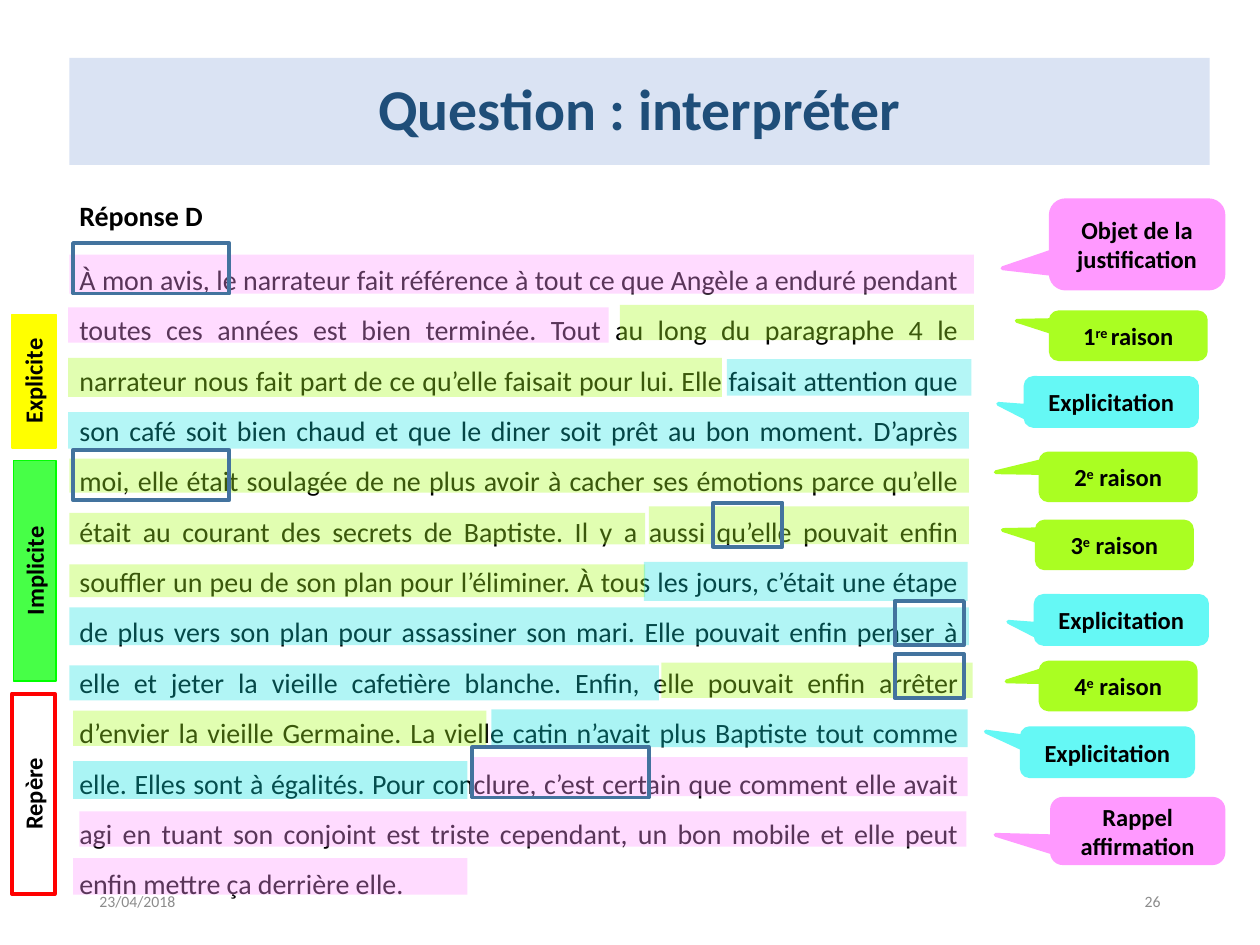
from pptx import Presentation
from pptx.dml.color import RGBColor
from pptx.enum.shapes import MSO_SHAPE
from pptx.enum.text import MSO_ANCHOR, MSO_AUTO_SIZE, PP_ALIGN
from pptx.oxml.ns import qn
from pptx.util import Inches, Pt
from lxml import etree

RECTANGLE = MSO_SHAPE.RECTANGLE
CALLOUT = MSO_SHAPE.ROUNDED_RECTANGULAR_CALLOUT
TOP, MIDDLE = MSO_ANCHOR.TOP, MSO_ANCHOR.MIDDLE
LEFT, CENTER, RIGHT, JUSTIFY = PP_ALIGN.LEFT, PP_ALIGN.CENTER, PP_ALIGN.RIGHT, PP_ALIGN.JUSTIFY

THEME = {
    "font": "Calibri",
    "title_size": 33, "body_size": 16, "label_size": 14, "footer_size": 9,
    "black": "000000", "grey": "8C8C8C", "navy": "1F4E79", "pale_blue": "DAE3F3",
    "pink": "FF99FF", "lime": "AAFE22", "teal": "0EE2E2", "cyan": "65F8F5",
    "yellow": "FFFF00", "green": "00FF00", "red": "FF0000", "steel": "43739E",
}

# Content; text between carets is superscript
TITLE = "Question : interpréter"
HEADING = "Réponse D"
ANSWER_SENTENCES = [
    "À mon avis, le narrateur fait référence à tout ce que Angèle a enduré pendant "
    "toutes ces années est bien terminée.",
    "Tout au long du paragraphe 4 le narrateur nous fait part de ce qu’elle faisait pour lui.",
    "Elle faisait attention que son café soit bien chaud et que le diner soit prêt au bon moment.",
    "D’après moi, elle était soulagée de ne plus avoir à cacher ses émotions parce qu’elle "
    "était au courant des secrets de Baptiste.",
    "Il y a aussi qu’elle pouvait enfin souffler un peu de son plan pour l’éliminer.",
    "À tous les jours, c’était une étape de plus vers son plan pour assassiner son mari.",
    "Elle pouvait enfin penser à elle et jeter la vieille cafetière blanche.",
    "Enfin, elle pouvait enfin arrêter d’envier la vieille Germaine.",
    "La vielle catin n’avait plus Baptiste tout comme elle.",
    "Elles sont à égalités.",
    "Pour conclure, c’est certain que comment elle avait agi en tuant son conjoint est triste "
    "cependant, un bon mobile et elle peut enfin mettre ça derrière elle.",
]
FOOTERS = [("23/04/2018", 0.69, LEFT), ("26", 7.06, RIGHT)]

# Highlighted passages: colour, opacity in percent, one area per line of text
HIGHLIGHTS = [
    ("pink", 35, [(0.55, 2.02, 7.18, 0.31), (0.54, 2.44, 4.29, 0.28)]),
    ("lime", 35, [(4.92, 2.42, 2.81, 0.28), (0.54, 2.84, 5.19, 0.31)]),
    ("teal", 31, [(5.77, 2.85, 1.94, 0.29), (0.54, 3.27, 7.15, 0.29)]),
    ("lime", 35, [(0.55, 3.64, 7.14, 0.27), (0.55, 4.07, 4.57, 0.25)]),
    ("lime", 35, [(5.15, 4.02, 2.54, 0.3), (0.55, 4.48, 4.57, 0.26)]),
    ("teal", 35, [(3.9, 5.63, 3.78, 0.3), (0.58, 6.04, 3.13, 0.3)]),
    ("teal", 32, [(5.11, 4.46, 2.57, 0.31), (0.55, 4.82, 7.14, 0.3), (0.55, 5.28, 4.68, 0.28)]),
    ("lime", 35, [(5.25, 5.26, 2.47, 0.28), (0.58, 5.64, 3.28, 0.28)]),
    ("pink", 35, [(3.75, 6.01, 3.93, 0.31), (0.63, 6.44, 7.04, 0.28), (0.58, 6.81, 3.13, 0.29)]),
]

# Callouts: text, colour, area, pointer tip relative to the centre
CALLOUTS = [
    ("Objet de la justification", "pink", (8.34, 1.59, 1.37, 0.7), (-0.78, 0.27)),
    ("1^re ^raison", "lime", (8.34, 2.48, 1.23, 0.37), (-0.72, -0.32)),
    ("Explicitation", "cyan", (8.14, 3, 1.36, 0.38), (-0.66, 0.04)),
    ("2^e^ raison", "lime", (8.26, 3.6, 1.23, 0.37), (-0.79, -0.1)),
    ("3^e^ raison", "lime", (8.23, 4.14, 1.23, 0.37), (-0.72, -0.32)),
    ("Explicitation", "cyan", (8.22, 4.73, 1.36, 0.38), (-0.66, 0.04)),
    ("4^e^ raison", "lime", (8.26, 5.26, 1.23, 0.37), (-0.72, -0.1)),
    ("Rappel affirmation", "pink", (8.35, 6.34, 1.36, 0.51), (-0.83, 0.06)),
    ("Explicitation", "cyan", (8.11, 5.78, 1.36, 0.38), (-0.71, -0.43)),
]

# Side tabs: text, fill, opacity, line colour, line width, area before rotation
TABS = [
    ("Explicite", "yellow", 100, "yellow", 0.75, (-0.26, 2.85, 1.06, 0.35)),
    ("Implicite", "green", 72, "green", 0.75, (-0.6, 4.36, 1.75, 0.34)),
    ("Repère", None, 100, "red", 2.25, (-0.53, 6.13, 1.59, 0.34)),
]
MARKERS = [
    (0.58, 1.93, 1.24, 0.4), (0.58, 3.57, 1.24, 0.4), (5.66, 3.99, 0.55, 0.35),
    (7.1, 4.77, 0.55, 0.35), (7.1, 5.19, 0.55, 0.35), (3.75, 5.93, 1.4, 0.4),
]


def color(name):
    return RGBColor.from_string(THEME[name])


def place(shape, area):
    shape.left, shape.top, shape.width, shape.height = map(Inches, area)


def write(shape, *texts, size="label_size", tint="black", bold=True, align=CENTER,
          anchor=MIDDLE, wrap=True, spacing=1.0, after=0):
    """Write one paragraph per text and return the paragraphs."""
    frame = shape.text_frame
    frame.auto_size = MSO_AUTO_SIZE.NONE
    frame.word_wrap, frame.vertical_anchor = wrap, anchor
    for index, text in enumerate(texts):
        para = frame.add_paragraph() if index else frame.paragraphs[0]
        para.alignment, para.line_spacing = align, spacing
        para.space_before, para.space_after = Pt(0), Pt(after)
        for part, words in enumerate(text.split("^")):
            span = para.add_run()
            span.text = words
            font = span.font
            font.name, font.size, font.bold = THEME["font"], Pt(THEME[size]), bold
            font.color.rgb = color(tint)
            if part % 2:
                span._r.get_or_add_rPr().set("baseline", "30000")
    return frame.paragraphs


def add_box(shapes, kind, area, fill=None, opacity=100, line=None, width=2.25):
    box = shapes.add_shape(kind, *map(Inches, area))
    box.shadow.inherit = False
    if fill:
        box.fill.solid()
        box.fill.fore_color.rgb = color(fill)
        if opacity < 100:
            tone = box.fill._xPr.find(".//" + qn("a:srgbClr"))
            etree.SubElement(tone, qn("a:alpha")).set("val", str(opacity * 1000))
    else:
        box.fill.background()
    if line:
        box.line.color.rgb = color(line)
        box.line.width = Pt(width)
    else:
        box.line.fill.background()
    return box


def main():
    deck = Presentation()
    deck.slide_width, deck.slide_height = Inches(10), Inches(7.5)
    page = deck.slides.add_slide(deck.slide_layouts[1])
    shapes = page.shapes

    # Title band
    title = shapes.title
    place(title, (0.55, 0.46, 9.05, 0.85))
    title.fill.solid()
    title.fill.fore_color.rgb = color("pale_blue")
    write(title, TITLE, size="title_size", tint="navy", spacing=0.9)

    # Pupil's answer, without bullets
    body = page.placeholders[1]
    place(body, (0.53, 1.39, 7.18, 5.87))
    heading, answer = write(body, HEADING, " ".join(ANSWER_SENTENCES), size="body_size",
                            align=JUSTIFY, anchor=TOP, spacing=1.5, after=8)
    heading.alignment = LEFT
    answer.runs[0].font.bold = False
    for para in (heading, answer):
        properties = para._p.get_or_add_pPr()
        properties.set("marL", "0")
        properties.set("indent", "0")
        etree.SubElement(properties, qn("a:buNone"))

    # Date and page number
    for text, left, align in FOOTERS:
        footer = shapes.add_textbox(*map(Inches, (left, 6.95, 2.25, 0.4)))
        write(footer, text, size="footer_size", tint="grey", bold=False, align=align)

    # Highlights, grouped by passage
    for fill, opacity, areas in HIGHLIGHTS:
        passage = shapes.add_group_shape()
        for area in areas:
            add_box(passage.shapes, RECTANGLE, area, fill, opacity)

    # Callouts
    for text, fill, area, tip in CALLOUTS:
        callout = add_box(shapes, CALLOUT, area, fill, line=fill)
        callout.adjustments[0], callout.adjustments[1] = tip
        write(callout, text)

    # Rotated tabs
    for text, fill, opacity, line, width, area in TABS:
        tab = add_box(shapes, RECTANGLE, area, fill, opacity, line, width)
        tab.rotation = 270
        write(tab, text, anchor=TOP, wrap=False)

    # Frames around the marker words
    frames = shapes.add_group_shape()
    for area in MARKERS:
        add_box(frames.shapes, RECTANGLE, area, line="steel")

    deck.save("out.pptx")


if __name__ == "__main__":
    main()
